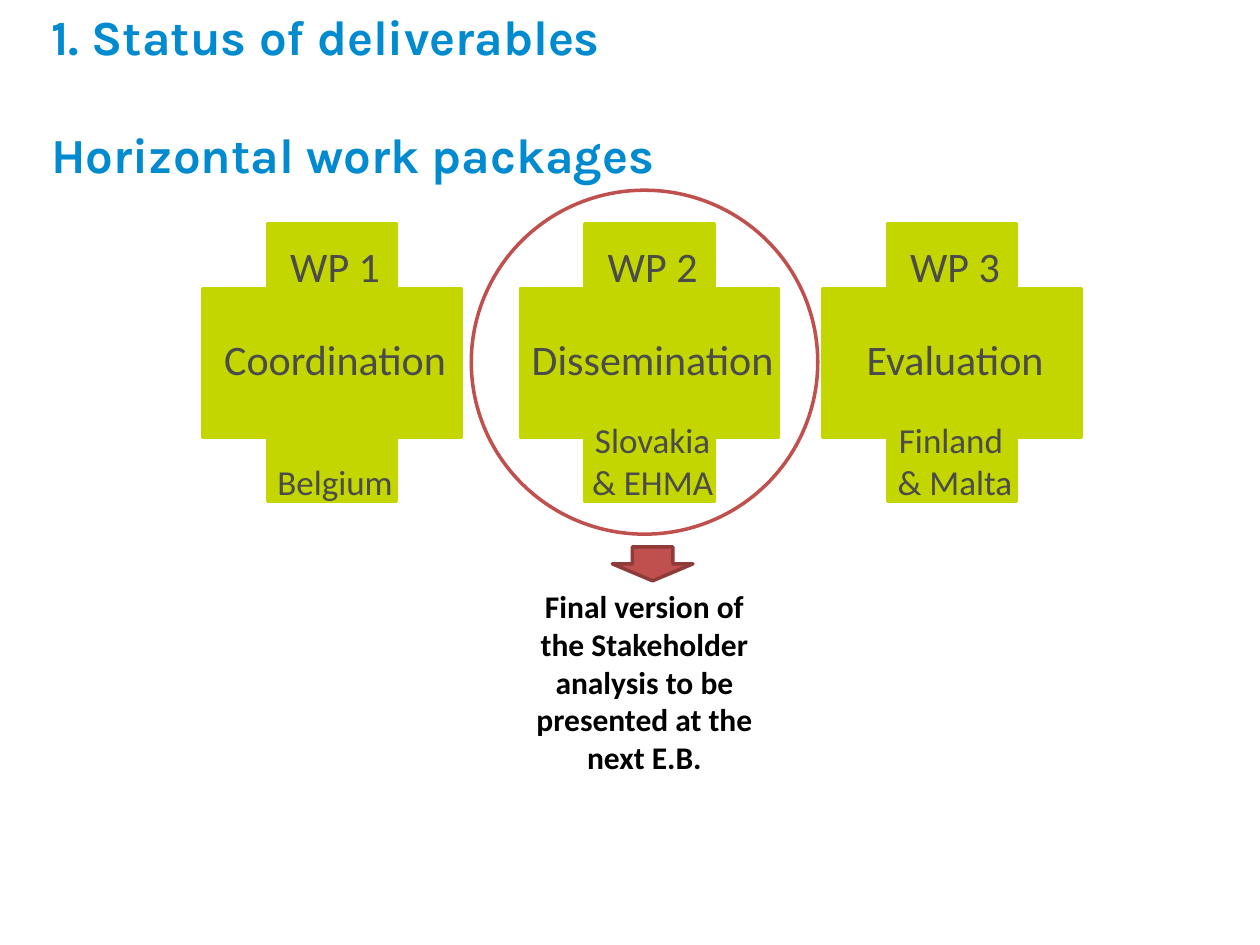
from pptx import Presentation
from pptx import util as u
from pptx.dml.color import RGBColor
from pptx.enum import shapes, text

COLORS = {"title": "008ACF", "card": "C3D600", "card_text": "4B4B4B",
          "accent": "C0504D", "accent_edge": "8E3B39", "note": "000000"}


class Deck:
    title_font, body_font = "Karla", "Calibri"
    line_width = u.Pt(2)

    def __init__(self, width, height):
        self.prs = Presentation()
        self.prs.slide_width, self.prs.slide_height = u.Inches(width), u.Inches(height)
        self.s = self.prs.slides.add_slide(self.prs.slide_layouts[6])

    def color(self, name):
        return RGBColor.from_string(COLORS[name])

    def shape(self, kind, box, line, fill=None):
        sp = self.s.shapes.add_shape(kind, *map(u.Inches, box))
        sp.shadow.inherit = False
        if fill:
            sp.fill.solid()
            sp.fill.fore_color.rgb = self.color(fill)
        else:
            sp.fill.background()
        sp.line.color.rgb = self.color(line)
        sp.line.width = self.line_width

    def text(self, box, lines, color, font=None, bold=False,
             align=text.PP_ALIGN.CENTER):
        """Each line is (wording, size in points, space before in points)."""
        tf = self.s.shapes.add_textbox(*map(u.Inches, box)).text_frame
        tf.word_wrap = True
        for i, (wording, size, before) in enumerate(lines):
            p = tf.add_paragraph() if i else tf.paragraphs[0]
            p.alignment = align
            if before:
                p.space_before = u.Pt(before)
            r = p.add_run()
            r.text = wording
            r.font.name = font or self.body_font
            r.font.size = u.Pt(size)
            r.font.bold = bold
            r.font.color.rgb = self.color(color)

    def card(self, x, code, name, places, place_gap):
        self.shape(shapes.MSO_SHAPE.CROSS, (x, 1.78, 2.05, 2.2), "card", "card")
        lines = [(code, 24, 0), (name, 24, 24.4)]
        lines += [(place, 20, 0 if i else place_gap) for i, place in enumerate(places)]
        self.text((x - 0.03, 1.86, 2.16, 2.19), lines, "card_text")


def main():
    deck = Deck(10, 7.5)
    deck.text((0.31, 0, 9, 1.25),
              [("1. Status of deliverables", 28, 0), ("Horizontal work packages", 28, 34)],
              "title", deck.title_font, True, text.PP_ALIGN.LEFT)

    for card in [
        (6.53, "WP 3", "Evaluation", ["Finland ", "& Malta"], 19.5),
        (4.13, "WP 2", "Dissemination", ["Slovakia", "& EHMA"], 19.5),
        (1.61, "WP 1", "Coordination", ["Belgium"], 43.9),
    ]:
        deck.card(*card)

    deck.shape(shapes.MSO_SHAPE.OVAL, (3.74, 1.51, 2.75, 2.73), "accent")
    deck.text((4.05, 4.61, 2.13, 1.62),
              [("Final version of the Stakeholder analysis to be presented "
                "at the next E.B.", 18, 0)], "note", bold=True)
    deck.shape(shapes.MSO_SHAPE.DOWN_ARROW, (4.86, 4.34, 0.64, 0.27),
               "accent_edge", "accent")
    deck.prs.save("out.pptx")


if __name__ == "__main__":
    main()
